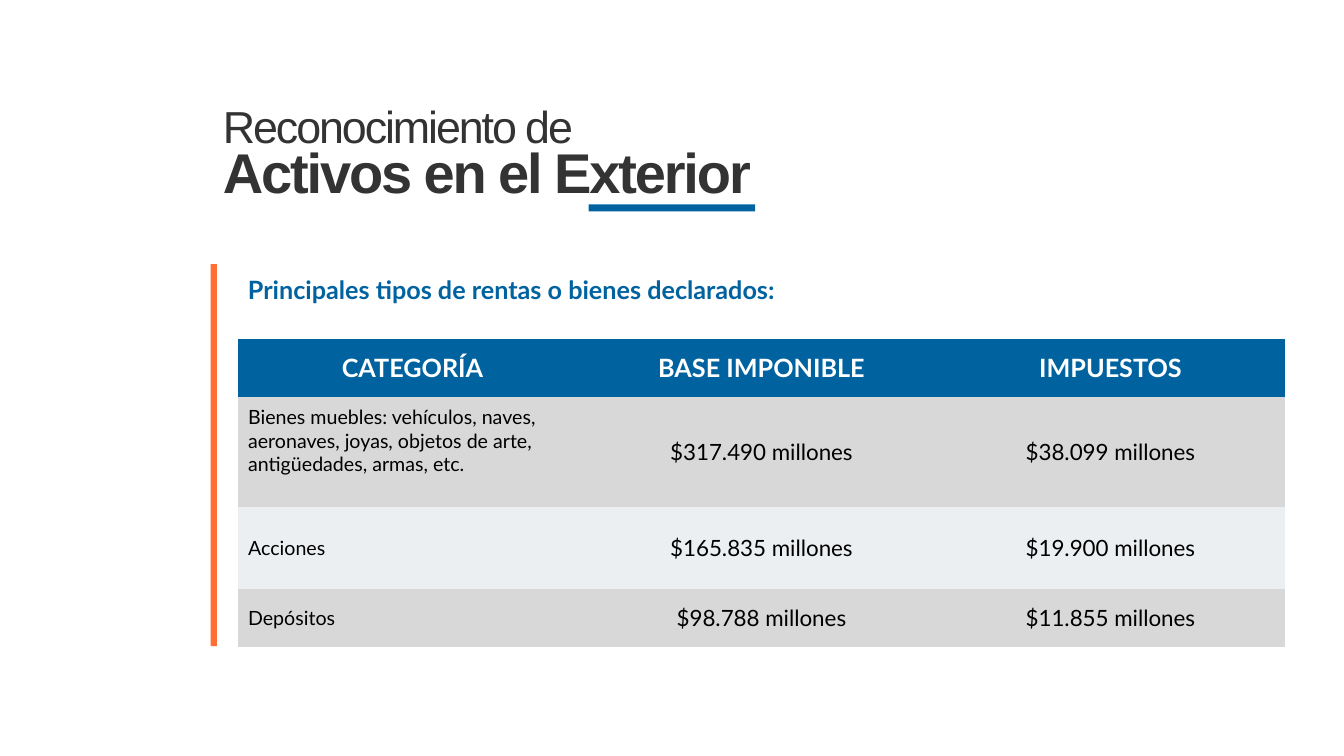
from dataclasses import dataclass

from pptx import Presentation
from pptx.dml.color import RGBColor
from pptx.enum.shapes import MSO_SHAPE
from pptx.enum.text import MSO_ANCHOR, MSO_AUTO_SIZE, PP_ALIGN
from pptx.util import Pt

TITLE_LINES = ["Reconocimiento de", "Activos en el Exterior"]
SUBTITLE = "Principales tipos de rentas o bienes declarados:"
TABLE_ROWS = [
    ("CATEGORÍA", "BASE IMPONIBLE", "IMPUESTOS"),
    ("Bienes muebles: vehículos, naves, aeronaves, joyas, objetos de arte, "
     "antigüedades, armas, etc.", "$317.490 millones", "$38.099 millones"),
    ("Acciones", "$165.835 millones", "$19.900 millones"),
    ("Depósitos", "$98.788 millones", "$11.855 millones"),
]
ROW_HEIGHTS = [41.9, 78.3, 58.2, 41.6]
TABLE_LEFT, TABLE_TOP, COLUMN_WIDTH = 170, 242, 249.3
LONG_CELL_BOTTOM_MARGIN = 20
NO_STYLE_NO_GRID = "{2D5ABB26-0587-4C30-8999-92F81FD0307C}"


@dataclass(frozen=True)
class Theme:
    blue: str = "0063A0"
    orange: str = "FF6F33"
    dark: str = "333333"
    white: str = "FFFFFF"
    black: str = "000000"
    bands: tuple = ("D8D8D8", "ECEFF1")
    title_font: str = "Arial"
    body_font: str = "Lato"
    title_sizes: tuple = (32, 40)
    heading_size: int = 18
    category_size: int = 14
    amount_size: int = 16


THEME = Theme()


def add_span(para, text, color, **formats):
    span = para.add_run()
    span.text = text
    for name, value in formats.items():
        setattr(span.font, name, value)
    span.font.color.rgb = RGBColor.from_string(color)
    return span


def place(shape, left, top, width, height):
    bounds = {"left": left, "top": top, "width": width, "height": height}
    for name, value in bounds.items():
        setattr(shape, name, Pt(value))


def add_bar(page, color, *bounds):
    bar = page.shapes.add_shape(MSO_SHAPE.RECTANGLE, *map(Pt, bounds))
    bar.shadow.inherit = False
    bar.fill.solid()
    bar.fill.fore_color.rgb = RGBColor.from_string(color)
    bar.line.fill.background()


def fill_title(page):
    title = page.shapes.title
    place(title, 152, 68.4, 405.4, 80)
    frame = title.text_frame
    frame.auto_size = MSO_AUTO_SIZE.NONE
    frame.vertical_anchor = MSO_ANCHOR.TOP
    frame.word_wrap = True
    for index, (text, size) in enumerate(zip(TITLE_LINES, THEME.title_sizes)):
        para = frame.add_paragraph() if index else frame.paragraphs[0]
        para.alignment = PP_ALIGN.LEFT
        para.line_spacing = Pt(37)
        para.space_before = Pt(0)
        span = add_span(para, text, THEME.dark, name=THEME.title_font,
                        size=Pt(size), bold=index == 1)
        span._r.get_or_add_rPr().set("spc", "-150")


def add_subtitle(page):
    box = page.shapes.add_textbox(Pt(TABLE_LEFT), Pt(190.8), Pt(480), Pt(29.5))
    box.text_frame.word_wrap = True
    para = box.text_frame.paragraphs[0]
    para.alignment = PP_ALIGN.JUSTIFY
    para.line_spacing = 1.07
    para.space_after = Pt(8)
    add_span(para, SUBTITLE, THEME.blue, name=THEME.body_font,
             size=Pt(THEME.heading_size), bold=True)


def cell_look(row, column):
    """Return fill, text colour, size and alignment for a table cell."""
    if row == 0:
        return THEME.blue, THEME.white, THEME.heading_size, PP_ALIGN.CENTER
    band = THEME.bands[(row - 1) % 2]
    if column == 0:
        return band, THEME.black, THEME.category_size, PP_ALIGN.LEFT
    return band, THEME.black, THEME.amount_size, PP_ALIGN.CENTER


def add_asset_table(page):
    column_count = len(TABLE_ROWS[0])
    bounds = (TABLE_LEFT, TABLE_TOP, COLUMN_WIDTH * column_count, sum(ROW_HEIGHTS))
    frame = page.shapes.add_table(len(TABLE_ROWS), column_count, *map(Pt, bounds))
    table = frame.table
    table._tbl.tblPr.find("{*}tableStyleId").text = NO_STYLE_NO_GRID
    for column in table.columns:
        column.width = Pt(COLUMN_WIDTH)
    for row, texts in enumerate(TABLE_ROWS):
        table.rows[row].height = Pt(ROW_HEIGHTS[row])
        for column, text in enumerate(texts):
            fill, color, size, alignment = cell_look(row, column)
            cell = table.cell(row, column)
            cell.vertical_anchor = MSO_ANCHOR.MIDDLE
            cell.fill.solid()
            cell.fill.fore_color.rgb = RGBColor.from_string(fill)
            para = cell.text_frame.paragraphs[0]
            para.alignment = alignment
            add_span(para, text, color, name=THEME.body_font,
                     size=Pt(size), bold=row == 0)
    table.cell(1, 0).margin_bottom = Pt(LONG_CELL_BOTTOM_MARGIN)


def main():
    deck = Presentation()
    deck.slide_width, deck.slide_height = Pt(960), Pt(540)
    page = deck.slides.add_slide(deck.slide_layouts[5])
    add_bar(page, THEME.blue, 420.5, 146, 119, 5)
    fill_title(page)
    add_asset_table(page)
    add_subtitle(page)
    add_bar(page, THEME.orange, 150.5, 188.6, 4.4, 273)
    deck.save("out.pptx")


if __name__ == "__main__":
    main()
